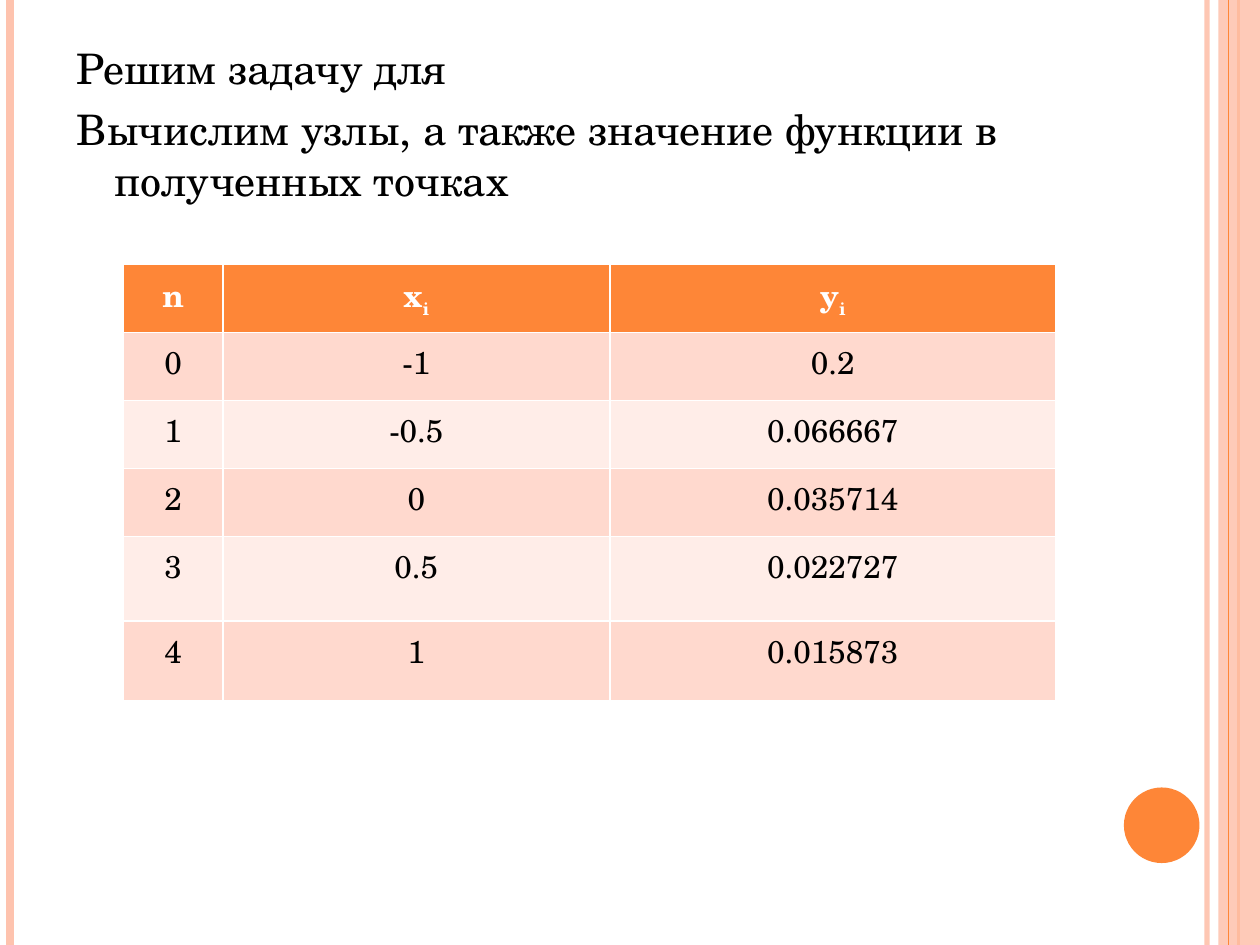
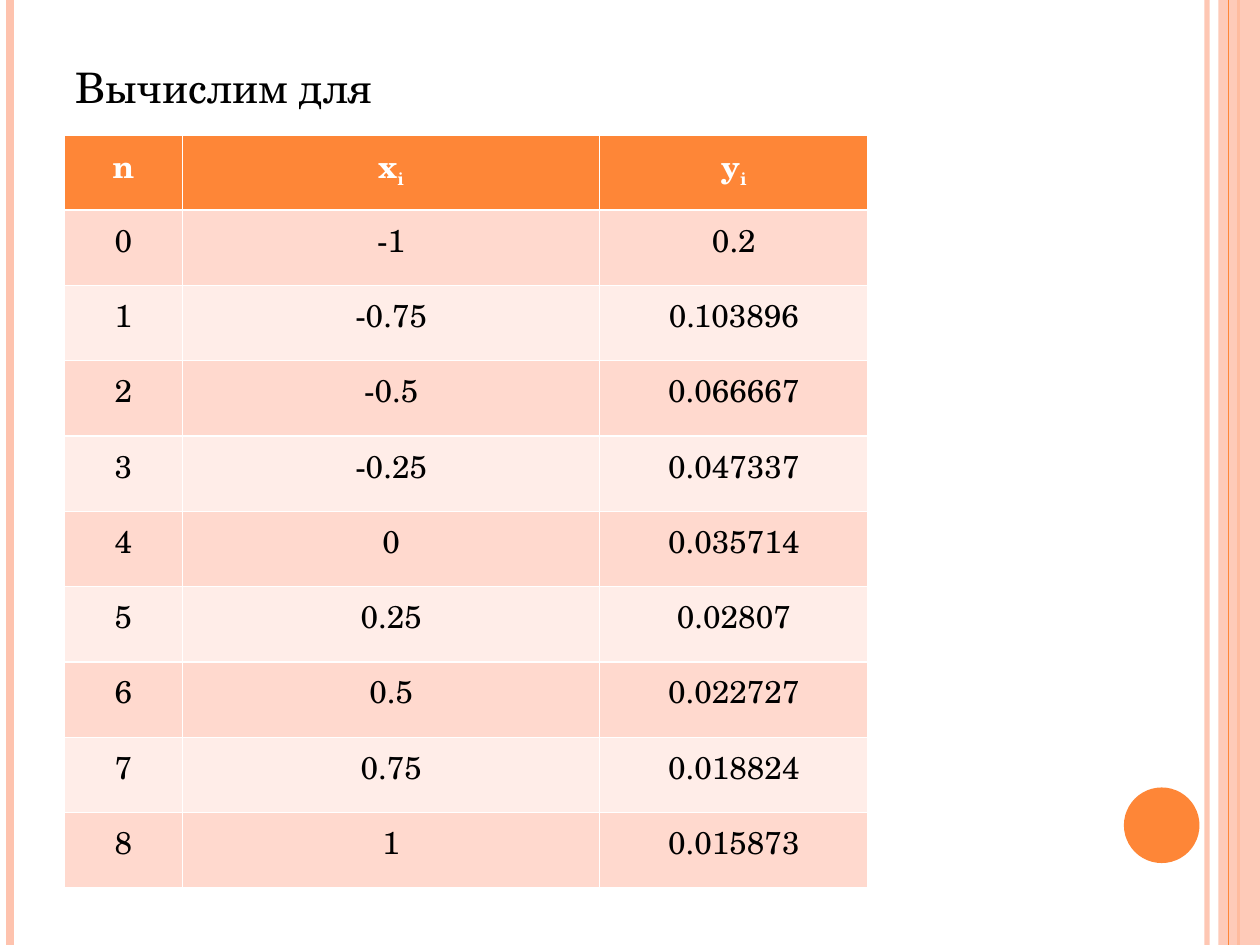
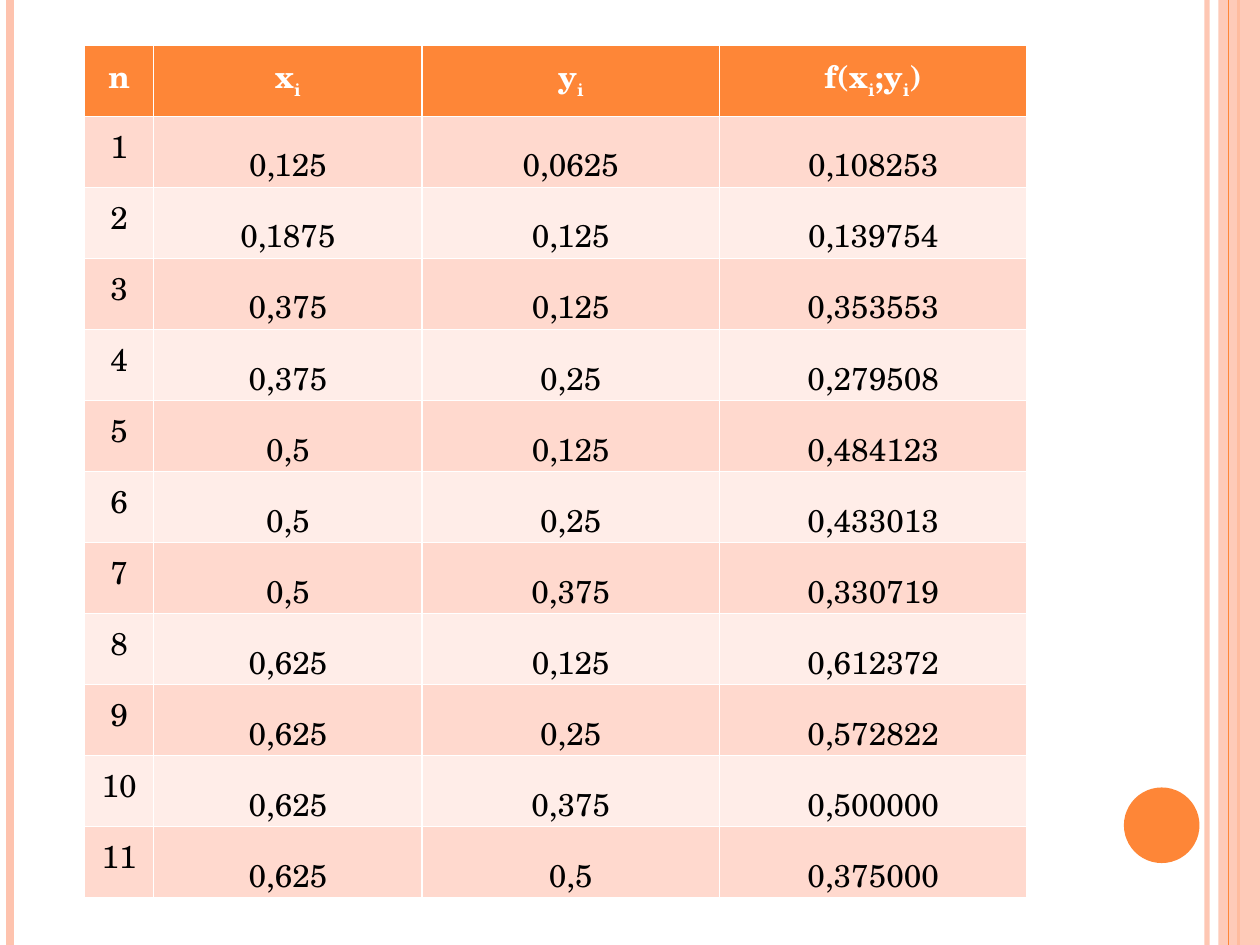
"""Builds three slides with tables of nodes and function values."""
from lxml import etree
from pptx import Presentation
from pptx import util as u
from pptx.dml.color import RGBColor
from pptx.enum import shapes, text
from pptx.oxml.ns import qn

ORANGE = RGBColor(0xFE, 0x86, 0x37)
PEACH = RGBColor(0xFE, 0xC3, 0xAE)
BAND_DARK = RGBColor(0xFF, 0xD9, 0xCE)
BAND_LIGHT = RGBColor(0xFF, 0xED, 0xE8)
WHITE = RGBColor(0xFF, 0xFF, 0xFF)
BLACK = RGBColor(0, 0, 0)
FONT = "TeX Gyre Schola"
W, H = u.Inches(10), u.Inches(7.5)
BODY, BLANK = 1, 6

STRIPES = [(9.58, 3, PEACH, 93), (0.08, 4.5, PEACH, 100), (9.83, 1.5, ORANGE, 100)]
EDGE_LINE = (9.75, 0.75, ORANGE, 100)

SLIDES = [
    {
        "body": ["Решим задачу для",
                 "Вычислим узлы, а также значение функции в полученных точках"],
        "body_box": (0.51, 0.29, 8.67, 6.72),
        "at": (0.98, 2.1),
        "cols": [0.79, 3.07, 3.54],
        "rows": [0.54] * 4 + [0.67, 0.63],
        "cells": ["n x_i y_i", "0 -1 0.2", "1 -0.5 0.066667", "2 0 0.035714",
                  "3 0.5 0.022727", "4 1 0.015873"],
    },
    {
        "body": ["Вычислим для"],
        "body_box": (0.5, 0.44, 8.17, 6.64),
        "at": (0.51, 1.07),
        "cols": [0.94, 3.31, 2.13],
        "rows": [5.98 / 10] * 10,
        "cells": ["n x_i y_i", "0 -1 0.2", "1 -0.75 0.103896", "2 -0.5 0.066667",
                  "3 -0.25 0.047337", "4 0 0.035714", "5 0.25 0.02807",
                  "6 0.5 0.022727", "7 0.75 0.018824", "8 1 0.015873"],
    },
    {
        "body": [],
        "at": (0.67, 0.36),
        "cols": [0.55, 2.13, 2.36, 2.44],
        "rows": [6.77 / 12] * 12,
        "low_values": True,
        "cells": ["n x_i y_i f(x_i;y_i)", "1 0,125 0,0625 0,108253",
                  "2 0,1875 0,125 0,139754", "3 0,375 0,125 0,353553",
                  "4 0,375 0,25 0,279508", "5 0,5 0,125 0,484123",
                  "6 0,5 0,25 0,433013", "7 0,5 0,375 0,330719",
                  "8 0,625 0,125 0,612372", "9 0,625 0,25 0,572822",
                  "10 0,625 0,375 0,500000", "11 0,625 0,5 0,375000"],
    },
]


def add_run(p, words, size, color, bold=False, sub=False):
    r = p.add_run()
    r.text = words
    r.font.name, r.font.size, r.font.bold = FONT, u.Pt(size), bold
    r.font.color.rgb = color
    if sub:
        r._r.get_or_add_rPr().set("baseline", "-25000")


def add_stripe(s, x, width, color, opacity):
    line = s.shapes.add_connector(
        shapes.MSO_CONNECTOR.STRAIGHT, u.Inches(x), 0, u.Inches(x), H)
    line.line.width = u.Pt(width)
    line.line.color.rgb = color
    spPr = line.element.spPr
    if opacity < 100:
        clr = spPr.find(".//" + qn("a:srgbClr"))
        etree.SubElement(clr, qn("a:alpha"), val=str(opacity * 1000))
    etree.SubElement(spPr, qn("a:effectLst"))


prs = Presentation()
prs.slide_width, prs.slide_height = W, H

for spec_row in SLIDES:
    s = prs.slides.add_slide(prs.slide_layouts[BODY if spec_row["body"] else BLANK])

    for stripe in STRIPES:
        add_stripe(s, *stripe)
    band = s.shapes.add_shape(
        shapes.MSO_SHAPE.RECTANGLE, u.Inches(9.67), 0, W - u.Inches(9.67), H)
    add_stripe(s, *EDGE_LINE)
    dot = s.shapes.add_shape(
        shapes.MSO_SHAPE.OVAL, u.Inches(8.92), u.Inches(6.25), u.Inches(0.6), u.Inches(0.6))
    for sp, color in ((band, PEACH), (dot, ORANGE)):
        sp.shadow.inherit = False
        sp.fill.solid()
        sp.fill.fore_color.rgb = color
        sp.line.fill.background()
    clr = band.element.spPr.find(".//" + qn("a:srgbClr"))
    etree.SubElement(clr, qn("a:alpha"), val="87000")

    if spec_row["body"]:
        title = s.shapes.title.element
        title.getparent().remove(title)
        body = s.placeholders[1]
        body.left, body.top, body.width, body.height = map(u.Inches, spec_row["body_box"])
        tf = body.text_frame
        tf.word_wrap = True
        tf.auto_size = text.MSO_AUTO_SIZE.NONE
        for i, words in enumerate(spec_row["body"]):
            p = tf.add_paragraph() if i else tf.paragraphs[0]
            p.space_before = u.Pt(6)
            pPr = p._p.get_or_add_pPr()
            pPr.set("marL", str(u.Inches(0.3)))
            pPr.set("indent", str(-u.Inches(0.3)))
            etree.SubElement(pPr, qn("a:buNone"))
            add_run(p, words, 24, BLACK)

    cols, rows = spec_row["cols"], spec_row["rows"]
    left, top = spec_row["at"]
    table = s.shapes.add_table(
        len(rows), len(cols), u.Inches(left), u.Inches(top),
        u.Inches(sum(cols)), u.Inches(sum(rows))).table
    for column, width in zip(table.columns, cols):
        column.width = u.Inches(width)
    for i, (height, values) in enumerate(zip(rows, spec_row["cells"])):
        table.rows[i].height = u.Inches(height)
        for j, value in enumerate(values.split()):
            cell = table.cell(i, j)
            cell.fill.solid()
            cell.fill.fore_color.rgb = (BAND_DARK if i % 2 else BAND_LIGHT) if i else ORANGE
            if spec_row.get("low_values") and i and j:
                cell.vertical_anchor = text.MSO_ANCHOR.BOTTOM
                cell.margin_left = cell.margin_right = cell.margin_top = u.Inches(0.01)
                cell.margin_bottom = 0
            p = cell.text_frame.paragraphs[0]
            p.alignment = text.PP_ALIGN.CENTER
            color = BLACK if i else WHITE
            for k, part in enumerate(value.split("_i")):
                if k:
                    add_run(p, "i", 18, color, not i, sub=True)
                if part:
                    add_run(p, part, 18, color, not i)

prs.save("out.pptx")
